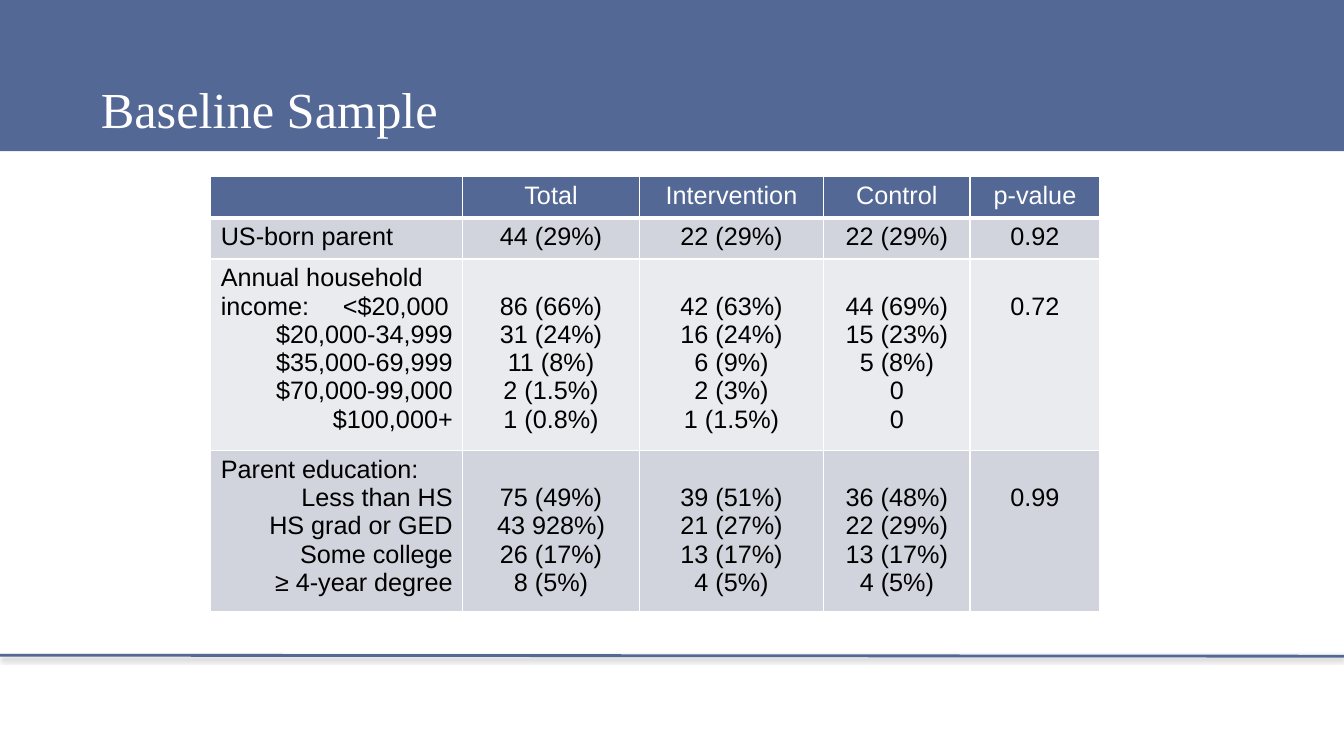
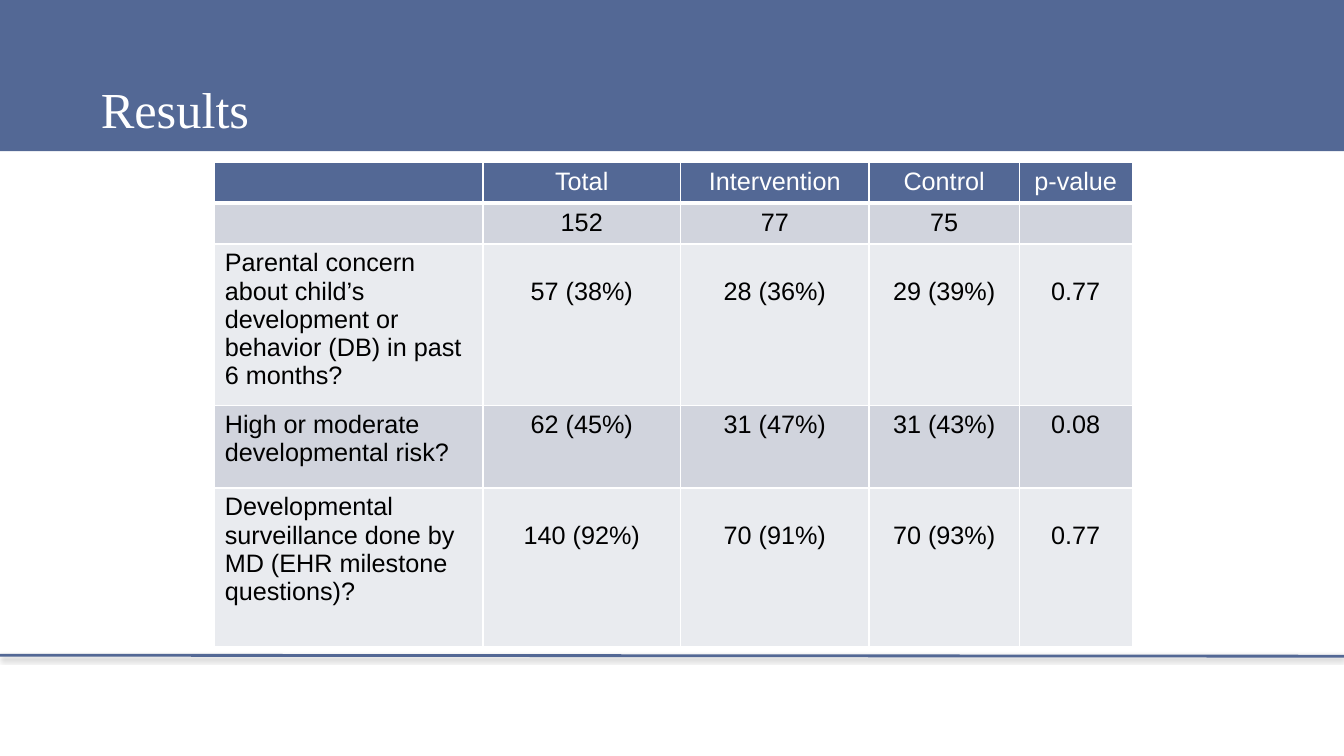
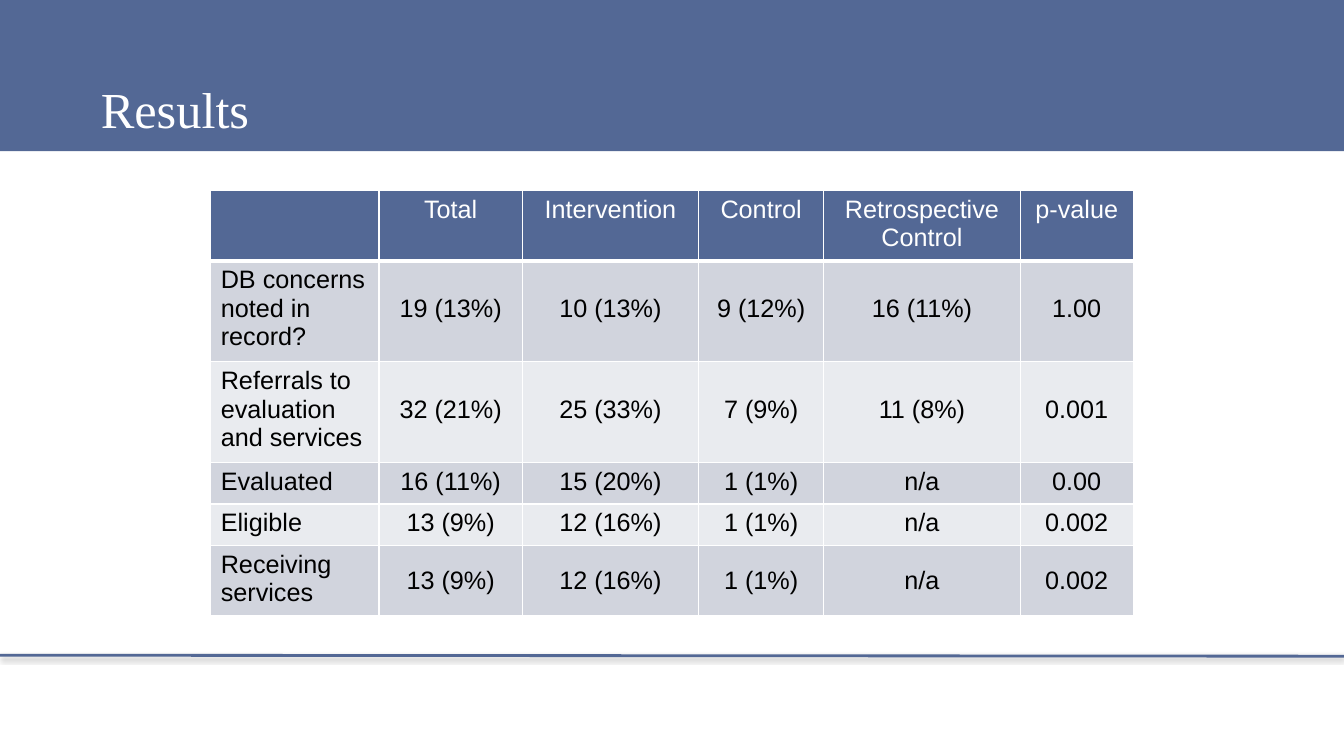
from lxml import etree
from pptx import Presentation
from pptx.dml.color import RGBColor
from pptx.enum import shapes, text
from pptx.oxml import ns
from pptx.util import Inches, Pt

NAVY = RGBColor(0x53, 0x68, 0x95)
WHITE = RGBColor(0xFF, 0xFF, 0xFF)
BLACK = RGBColor(0, 0, 0)
STRIPES = (RGBColor(0xD1, 0xD4, 0xDD), RGBColor(0xE9, 0xEB, 0xEF))
TITLE_FONT = {"name": "Times New Roman", "size": Pt(36), "bold": False}
TABLE_FONT = {"name": "Arial", "size": Pt(18), "bold": False}
SIDE_MARGIN, TOP_MARGIN, LINE_HEIGHT = 0.1, 0.05, 0.28
TOP, MIDDLE = text.MSO_ANCHOR.TOP, text.MSO_ANCHOR.MIDDLE
LEFT, CENTER, RIGHT = text.PP_ALIGN.LEFT, text.PP_ALIGN.CENTER, text.PP_ALIGN.RIGHT

# Each row: height, lines its values are lowered by, anchor of its values, cells
SLIDES = [
    {
        "title": "Baseline Sample",
        "at": (2.09, 1.75),
        "columns": (2.5, 1.75, 1.83, 1.45, 1.29),
        "rows": [
            (0.41, 0, TOP, ("", "Total", "Intervention", "Control", "p-value")),
            (0.41, 0, TOP, ("US-born parent", "44 (29%)", "22 (29%)", "22 (29%)", "0.92")),
            (1.9, 1, TOP, (
                "Annual household income:\t<$20,000\n$20,000-34,999\n$35,000-69,999\n"
                "$70,000-99,000\n$100,000+",
                "86 (66%)\n31 (24%)\n11 (8%)\n2 (1.5%)\n1 (0.8%)",
                "42 (63%)\n16 (24%)\n6 (9%)\n2 (3%)\n1 (1.5%)",
                "44 (69%)\n15 (23%)\n5 (8%)\n0\n0",
                "0.72")),
            (1.6, 1, TOP, (
                "Parent education:\nLess than HS\nHS grad or GED\nSome college\n≥ 4-year degree",
                "75 (49%)\n43 928%)\n26 (17%)\n8 (5%)",
                "39 (51%)\n21 (27%)\n13 (17%)\n4 (5%)",
                "36 (48%)\n22 (29%)\n13 (17%)\n4 (5%)",
                "0.99")),
        ],
    },
    {
        "title": "Results",
        "at": (2.13, 1.61),
        "columns": (2.66, 1.96, 1.87, 1.49, 1.12),
        "rows": [
            (0.4, 0, TOP, ("", "Total", "Intervention", "Control", "p-value")),
            (0.4, 0, TOP, ("", "152", "77", "75", "")),
            (1.6, 1, TOP, (
                "Parental concern about child’s development or behavior (DB) in past 6 months?",
                "57 (38%)", "28 (36%)", "29 (39%)", "0.77")),
            (0.82, 0, TOP, (
                "High or moderate developmental risk?",
                "62 (45%)", "31 (47%)", "31 (43%)", "0.08")),
            (1.57, 1, TOP, (
                "Developmental surveillance done by MD (EHR milestone questions)?",
                "140 (92%)", "70 (91%)", "70 (93%)", "0.77")),
        ],
    },
    {
        "title": "Results",
        "at": (2.09, 1.89),
        "columns": (1.67, 1.42, 1.75, 1.24, 1.95, 1.12),
        "rows": [
            (0.7, 0, TOP, ("", "Total", "Intervention", "Control",
                           "Retrospective Control", "p-value")),
            (1, 1, TOP, ("DB concerns noted in record?",
                         "19 (13%)", "10 (13%)", "9 (12%)", "16 (11%)", "1.00")),
            (1, 1, TOP, ("Referrals to evaluation and services",
                         "32 (21%)", "25 (33%)", "7 (9%)", "11 (8%)", "0.001")),
            (0.41, 0, TOP, ("Evaluated", "16 (11%)", "15 (20%)", "1 (1%)", "n/a", "0.00")),
            (0.41, 0, TOP, ("Eligible", "13 (9%)", "12 (16%)", "1 (1%)", "n/a", "0.002")),
            (0.7, 0, MIDDLE, ("Receiving services",
                              "13 (9%)", "12 (16%)", "1 (1%)", "n/a", "0.002")),
        ],
    },
]


def assign(target, values):
    for name, value in values.items():
        setattr(target, name, value)


def add_xml(parent, tag, **attributes):
    return etree.SubElement(parent, ns.qn(tag), attributes)


def style_font(font, values, color):
    assign(font, values)
    font.color.rgb = color


def decorate_layout(layout, page, width):
    """Draw the title band and footer line, then move them to the layout."""
    for holder in list(layout.placeholders):
        if holder.placeholder_format.type != shapes.PP_PLACEHOLDER.TITLE:
            holder._element.getparent().remove(holder._element)

    band = page.shapes.add_shape(shapes.MSO_SHAPE.RECTANGLE, 0, 0, width, Inches(1.5))
    band.shadow.inherit = False
    band.fill.solid()
    band.fill.fore_color.rgb = NAVY
    band.line.fill.background()

    rule = page.shapes.add_connector(
        shapes.MSO_CONNECTOR.STRAIGHT, 0, Inches(6.5), width, Inches(6.51))
    rule.line.color.rgb = NAVY
    rule.line.width = Pt(2)
    effects = add_xml(rule._element.spPr, "a:effectLst")
    shadow = add_xml(effects, "a:outerShdw", blurRad=str(Pt(3.1)), dist=str(Pt(1.6)),
                     dir="5400000", rotWithShape="0")
    add_xml(add_xml(shadow, "a:srgbClr", val=str(BLACK)), "a:alpha", val="38000")

    for place, shape in enumerate((band, rule), start=2):
        layout.shapes._spTree.insert(place, shape._element)


def set_title(page, words):
    title = page.shapes.title
    assign(title, {"left": Inches(1), "top": Inches(0.25),
                   "width": Inches(11.33), "height": Inches(1.13)})
    frame = title.text_frame
    frame.text = words
    assign(frame, {"margin_left": 0, "margin_right": 0, "margin_top": 0, "margin_bottom": 0,
                   "vertical_anchor": text.MSO_ANCHOR.BOTTOM, "word_wrap": True})
    para = frame.paragraphs[0]
    para.alignment = LEFT
    style_font(para.runs[0].font, TITLE_FONT, WHITE)


def set_borders(cell, bottom):
    properties = cell._tc.get_or_add_tcPr()
    for side, points in (("L", 1), ("R", 1), ("T", 1), ("B", bottom)):
        edge = add_xml(properties, "a:ln" + side, w=str(Pt(points)))
        add_xml(add_xml(edge, "a:solidFill"), "a:srgbClr", val=str(WHITE))


def fill_cell(cell, words, is_header, is_label, color, lowered, anchor, width):
    set_borders(cell, 3 if is_header else 1)
    cell.fill.solid()
    cell.fill.fore_color.rgb = color
    drop = 0 if is_label else lowered * LINE_HEIGHT
    assign(cell, {"margin_left": Inches(SIDE_MARGIN), "margin_right": Inches(SIDE_MARGIN),
                  "margin_top": Inches(TOP_MARGIN + drop), "margin_bottom": Inches(TOP_MARGIN),
                  "vertical_anchor": TOP if is_label else anchor})
    cell.text = words
    for index, para in enumerate(cell.text_frame.paragraphs):
        para.alignment = CENTER if not is_label else RIGHT if index else LEFT
        if "\t" in para.text:
            stops = add_xml(para._p.get_or_add_pPr(), "a:tabLst")
            stop = width - 2 * SIDE_MARGIN - 0.04
            add_xml(stops, "a:tab", pos=str(Inches(stop)), algn="r")
        for span in para.runs:
            style_font(span.font, TABLE_FONT, WHITE if is_header else BLACK)


def add_grid(page, at, columns, rows):
    left, top = at
    heights = [row[0] for row in rows]
    grid = page.shapes.add_table(len(rows), len(columns), Inches(left), Inches(top),
                                 Inches(sum(columns)), Inches(sum(heights))).table
    assign(grid, {"first_row": False, "horz_banding": False})
    for column, width in zip(grid.columns, columns):
        column.width = Inches(width)
    for r, (height, lowered, anchor, cells) in enumerate(rows):
        grid.rows[r].height = Inches(height)
        color = STRIPES[(r - 1) % 2] if r else NAVY
        for c, words in enumerate(cells):
            fill_cell(grid.cell(r, c), words, r == 0, c == 0, color,
                      lowered, anchor, columns[c])


def main():
    deck = Presentation()
    deck.slide_width, deck.slide_height = Inches(13.33), Inches(7.5)
    layout = deck.slide_layouts[5]
    for index, content in enumerate(SLIDES):
        page = deck.slides.add_slide(layout)
        if index == 0:
            decorate_layout(layout, page, deck.slide_width)
        set_title(page, content["title"])
        add_grid(page, content["at"], content["columns"], content["rows"])
    deck.save("out.pptx")


if __name__ == "__main__":
    main()
